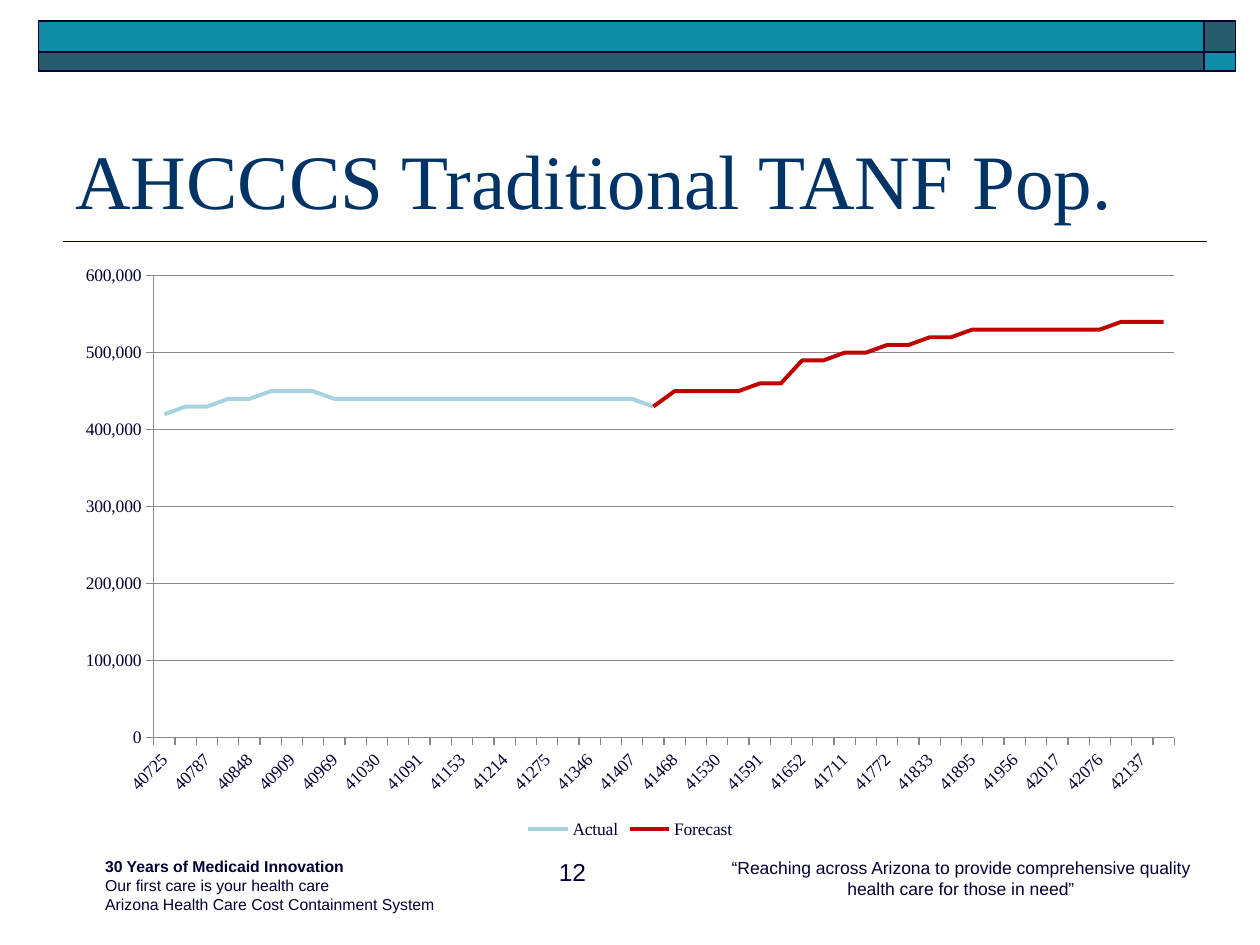
"""Builds the slide with the actual and forecast TANF population line chart."""
from lxml import etree
from pptx import Presentation
from pptx.chart.data import CategoryChartData
from pptx.dml.color import RGBColor
from pptx.enum.chart import XL_CHART_TYPE, XL_LEGEND_POSITION, XL_TICK_MARK
from pptx.enum.shapes import MSO_CONNECTOR, MSO_SHAPE
from pptx.enum.text import MSO_ANCHOR, PP_ALIGN
from pptx.oxml.ns import qn
from pptx.util import Emu, Inches, Pt

RECTANGLE = MSO_SHAPE.RECTANGLE
STRAIGHT = MSO_CONNECTOR.STRAIGHT
LINE_CHART = XL_CHART_TYPE.LINE
LEGEND_BOTTOM = XL_LEGEND_POSITION.BOTTOM
TICK_OUTSIDE = XL_TICK_MARK.OUTSIDE
TOP, BOTTOM = MSO_ANCHOR.TOP, MSO_ANCHOR.BOTTOM
LEFT, CENTER, RIGHT = PP_ALIGN.LEFT, PP_ALIGN.CENTER, PP_ALIGN.RIGHT
SERIF, SANS = "Times New Roman", "Arial"
INK, NAVY, TEAL, SLATE, GRAY = "000033", "003366", "108DA6", "275C6D", "878787"
color = RGBColor.from_string

presentation = Presentation()
presentation.slide_width = Inches(10)
presentation.slide_height = Inches(7.5)
slide = presentation.slides.add_slide(presentation.slide_layouts[6])
column = presentation.slide_width / 100
row = presentation.slide_height / 100


def place(left, top, width, height):
    """Turns grid columns and rows into slide lengths."""
    return [Emu(round(length)) for length in
            (left * column, top * row, width * column, height * row)]


def add_text(text, box, size, font=SANS, ink=INK, align=LEFT, anchor=TOP,
             indent=1, bold_lines=0):
    """Adds a text box with one paragraph for each line."""
    frame = slide.shapes.add_textbox(*place(*box)).text_frame
    frame.word_wrap = True
    frame.vertical_anchor = anchor
    frame.margin_left = Emu(round(indent * column))
    frame.text = text
    for number, paragraph in enumerate(frame.paragraphs):
        paragraph.alignment = align
        paragraph.font.name = font
        paragraph.font.size = Pt(size)
        paragraph.font.color.rgb = color(ink)
        paragraph.font.bold = number < bold_lines


rule_left, rule_top, rule_width, _ = place(5, 25.55, 90.8, 0)
rule = slide.shapes.add_connector(
    STRAIGHT, rule_left + rule_width, rule_top, rule_left, rule_top)
rule.line.color.rgb = color(INK)
rule.line.width = Pt(1)
etree.SubElement(rule._element.spPr, qn("a:effectLst"))

banner_rows = [(2.22, 3.33, (TEAL, SLATE)), (5.55, 2, (SLATE, TEAL))]
banner_columns = [(3.05, 92.5), (95.55, 2.5)]
for top, height, fills in banner_rows:
    for (left, width), fill in zip(banner_columns, fills):
        bar = slide.shapes.add_shape(RECTANGLE, *place(left, top, width, height))
        bar.shadow.inherit = False
        bar.fill.solid()
        bar.fill.fore_color.rgb = color(fill)
        bar.line.color.rgb = color(INK)
        bar.line.width = Pt(1)

add_text("AHCCCS Traditional TANF Pop.", (5, 7.8, 90, 16.67), 44,
         font=SERIF, ink=NAVY, anchor=BOTTOM)
add_text("“Reaching across Arizona to provide comprehensive quality "
         "health care for those in need”",
         (55.85, 90, 40.8, 5.73), 10, align=CENTER)
add_text("30 Years of Medicaid Innovation\nOur first care is your health care\n"
         "Arizona Health Care Cost Containment System",
         (2.5, 90, 93.3, 6.93), 9, indent=5.85, bold_lines=1)
add_text("12", (24.2, 90, 23.3, 6.93), 14, align=RIGHT)

months = [
    40725, 40756, 40787, 40817, 40848, 40878, 40909, 40940, 40969, 41000, 41030, 41061,
    41091, 41122, 41153, 41194, 41214, 41244, 41275, 41318, 41346, 41377, 41407, 41438,
    41468, 41499, 41530, 41560, 41591, 41621, 41652, 41683, 41711, 41742, 41772, 41803,
    41833, 41864, 41895, 41925, 41956, 41986, 42017, 42048, 42076, 42107, 42137, 42168]
actual = [42, 43, 43, 44, 44, 45, 45, 45] + [44] * 15 + [43]
forecast = [43, 45, 45, 45, 45, 46, 46, 49, 49, 50, 50, 51, 51, 52, 52]
forecast += [53] * 7 + [54] * 3
chart_data = CategoryChartData(number_format="#,##0")
chart_data.categories = [str(month) for month in months]
for name, ten_thousands in (("Actual", actual), ("Forecast", forecast)):
    gap = [None] * (len(months) - len(ten_thousands))
    values = [value * 10000 for value in ten_thousands]
    chart_data.add_series(name, values + gap if name == "Actual" else gap + values)

chart = slide.shapes.add_chart(
    LINE_CHART, *place(5, 26.67, 90, 62.67), chart_data).chart
chart.has_title = False
chart.font.name = SERIF
chart.font.size = Pt(10)
chart.font.color.rgb = color(INK)
chart.has_legend = True
chart.legend.position = LEGEND_BOTTOM
chart.legend.include_in_layout = False
chart.plots[0].vary_by_categories = False
for series, stroke in zip(chart.plots[0].series, ("A7D2DF", "C00000")):
    series.smooth = False
    series.format.line.color.rgb = color(stroke)
    series.format.line.width = Pt(2.25)

value_axis, category_axis = chart.value_axis, chart.category_axis
value_axis.minimum_scale, value_axis.maximum_scale = 0, 600000
value_axis.major_unit = 100000
value_axis.has_major_gridlines = True
value_axis.tick_labels.number_format = "#,##0"
value_axis.tick_labels.number_format_is_linked = False
for axis in (value_axis, category_axis):
    axis.major_tick_mark = TICK_OUTSIDE
    axis.tick_labels.font.size = Pt(10)
for lines in (value_axis, category_axis, value_axis.major_gridlines):
    lines.format.line.color.rgb = color(GRAY)
    lines.format.line.width = Pt(0.75)
category_axis._element.txPr.find(qn("a:bodyPr")).set("rot", "-2700000")

plot_area = chart._chartSpace.chart.plotArea
for layout in plot_area.findall(qn("c:layout")):
    plot_area.remove(layout)
layout = etree.Element(qn("c:layout"))
manual = etree.SubElement(layout, qn("c:manualLayout"))
for tag, value in (("layoutTarget", "inner"), ("xMode", "edge"), ("yMode", "edge"),
                   ("x", "0.08"), ("y", "0.04"), ("w", "0.9"), ("h", "0.78")):
    etree.SubElement(manual, qn("c:" + tag)).set("val", value)
plot_area.insert(0, layout)

presentation.save("out.pptx")
